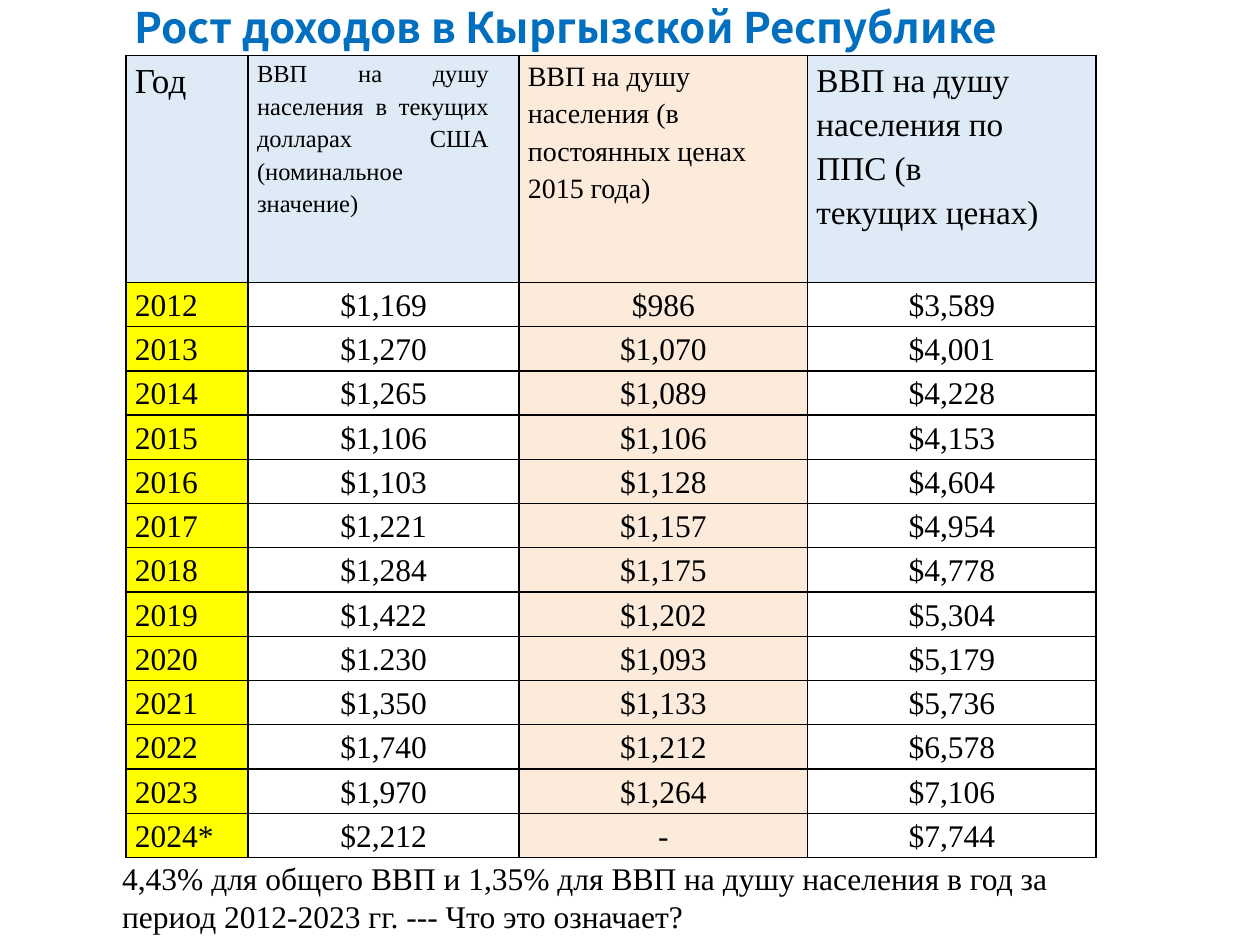
import pptx
import pptx.util
import pptx.dml.color
import pptx.enum.text
import pptx.oxml
import pptx.oxml.ns

Inches = pptx.util.Inches
Pt = pptx.util.Pt
ALIGN = pptx.enum.text.PP_ALIGN

SERIF = "Times New Roman"
SANS = "Noto Sans CJK KR"
COLORS = {
    "title": "006FC0",
    "text": "000000",
    "head": "DEEAF6",
    "real": "FCEADA",
    "year": "FFFF00",
}
WIDTHS = [0.97, 2.15, 2.29, 2.29]
HEADS = [
    ("Год", 20, ALIGN.LEFT, 1.17, 0, "head"),
    ("ВВП на душу населения в текущих долларах США (номинальное значение)",
     14, ALIGN.JUSTIFY, 1.2, 0.24, "head"),
    ("ВВП на душу населения (в постоянных ценах 2015 года)",
     16, ALIGN.LEFT, 1.2, 0, "real"),
    ("ВВП на душу населения по ППС (в текущих ценах)",
     19, ALIGN.LEFT, 1.2, 0.43, "head"),
]
FILLS = ["year", None, "real", None]
ROWS = [
    ("2012", "$1,169", "$986", "$3,589"),
    ("2013", "$1,270", "$1,070", "$4,001"),
    ("2014", "$1,265", "$1,089", "$4,228"),
    ("2015", "$1,106", "$1,106", "$4,153"),
    ("2016", "$1,103", "$1,128", "$4,604"),
    ("2017", "$1,221", "$1,157", "$4,954"),
    ("2018", "$1,284", "$1,175", "$4,778"),
    ("2019", "$1,422", "$1,202", "$5,304"),
    ("2020", "$1.230", "$1,093", "$5,179"),
    ("2021", "$1,350", "$1,133", "$5,736"),
    ("2022", "$1,740", "$1,212", "$6,578"),
    ("2023", "$1,970", "$1,264", "$7,106"),
    ("2024*", "$2,212", "-", "$7,744"),
]


def rgb(name):
    return pptx.dml.color.RGBColor.from_string(COLORS[name])


def add_run(para, text, size, font=SERIF, color="text", bold=False):
    run = para.add_run()
    run.text = text
    run.font.size = Pt(size)
    run.font.name = font
    run.font.bold = bold
    run.font.color.rgb = rgb(color)


def indent(para, left):
    props = para._p.get_or_add_pPr()
    props.set("marL", str(Inches(left)))
    props.set("indent", "0")


def add_label(slide, box, text, size, **style):
    frame = slide.shapes.add_textbox(*map(Inches, box)).text_frame
    frame.word_wrap = True
    frame.margin_left = frame.margin_right = frame.margin_bottom = 0
    frame.margin_top = Inches(0.01)
    para = frame.paragraphs[0]
    indent(para, 0.01)
    add_run(para, text, size, **style)


def add_borders(cell):
    props = cell._tc.get_or_add_tcPr()
    space = pptx.oxml.ns.nsdecls("a")
    for place, side in enumerate(("lnL", "lnR", "lnT", "lnB")):
        line = pptx.oxml.parse_xml(
            f'<a:{side} {space} w="{Pt(1)}"><a:solidFill>'
            f'<a:srgbClr val="{COLORS["text"]}"/></a:solidFill></a:{side}>')
        props.insert(place, line)


def fill_cell(cell, text, size, align, space, right, fill):
    cell.margin_left = cell.margin_top = cell.margin_bottom = 0
    cell.margin_right = Inches(right)
    para = cell.text_frame.paragraphs[0]
    para.alignment = align
    para.line_spacing = space
    if align != ALIGN.CENTER:
        indent(para, 0.07)
    add_run(para, text, size)
    if fill:
        cell.fill.solid()
        cell.fill.fore_color.rgb = rgb(fill)
    else:
        cell.fill.background()
    add_borders(cell)


def add_grid(slide):
    shape = slide.shapes.add_table(
        len(ROWS) + 1, len(WIDTHS),
        Inches(1), Inches(0.44), Inches(sum(WIDTHS)), Inches(6.35))
    table = shape.table
    table.first_row = table.horz_banding = False
    for col, width in zip(table.columns, WIDTHS):
        col.width = Inches(width)
    for index, row in enumerate(table.rows):
        row.height = Inches(0.35 if index else 1.8)
    for col, head in enumerate(HEADS):
        fill_cell(table.cell(0, col), *head)
    for index, values in enumerate(ROWS, 1):
        for col, value in enumerate(values):
            align = ALIGN.CENTER if col else ALIGN.LEFT
            fill_cell(table.cell(index, col), value, 18, align, 1.17, 0,
                      FILLS[col])


def main():
    deck = pptx.Presentation()
    deck.slide_width = Inches(10)
    deck.slide_height = Inches(7.5)
    slide = deck.slides.add_slide(deck.slide_layouts[6])
    add_label(slide, (1.06, 0, 7.46, 0.41),
              "Рост доходов в Кыргызской Республике", 24,
              font=SANS, color="title", bold=True)
    add_grid(slide)
    add_label(slide, (0.96, 6.81, 8.07, 0.62),
              "4,43% для общего ВВП и 1,35% для ВВП на душу населения в год "
              "за период 2012-2023 гг. --- Что это означает?", 18)
    deck.save("out.pptx")


if __name__ == "__main__":
    main()
